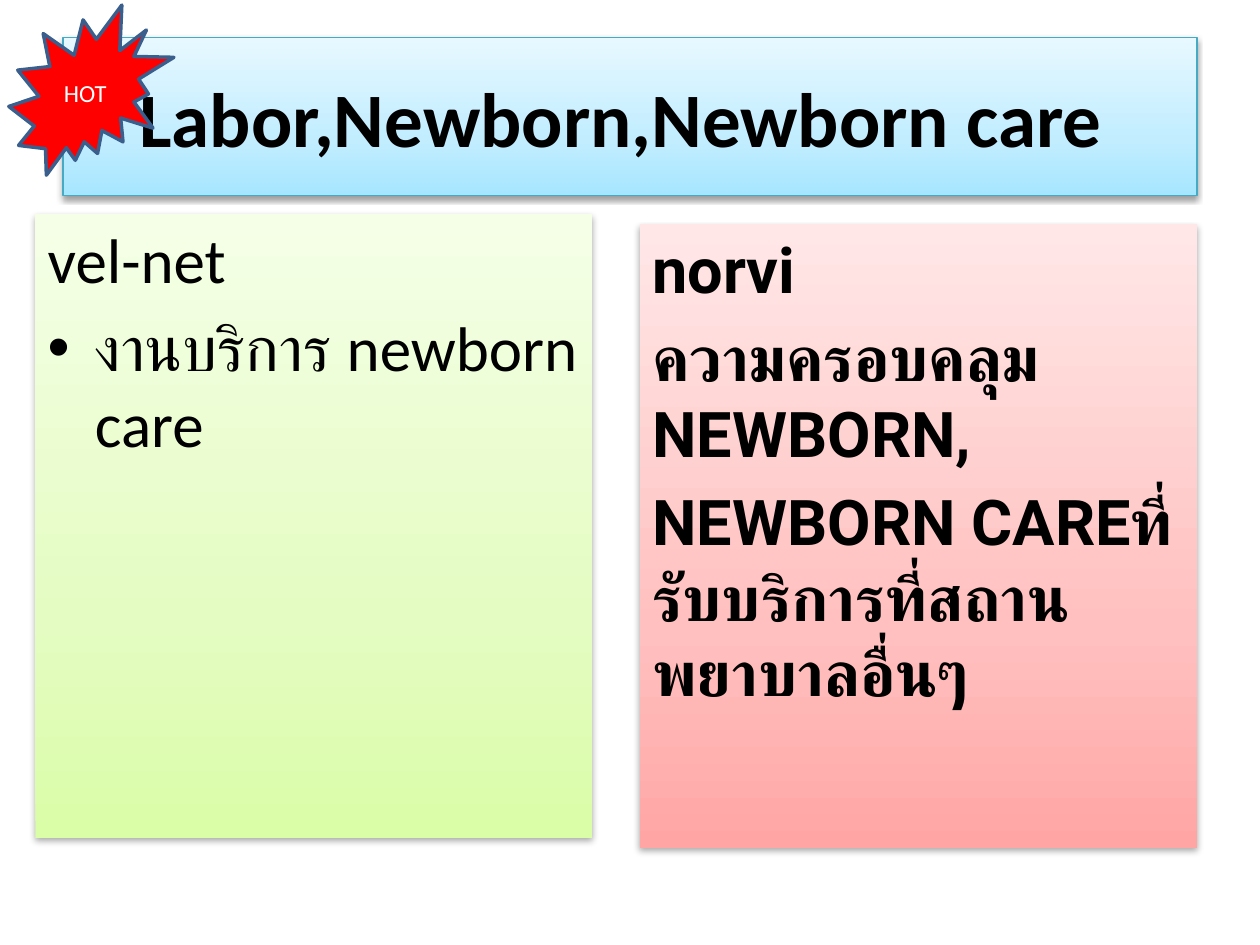
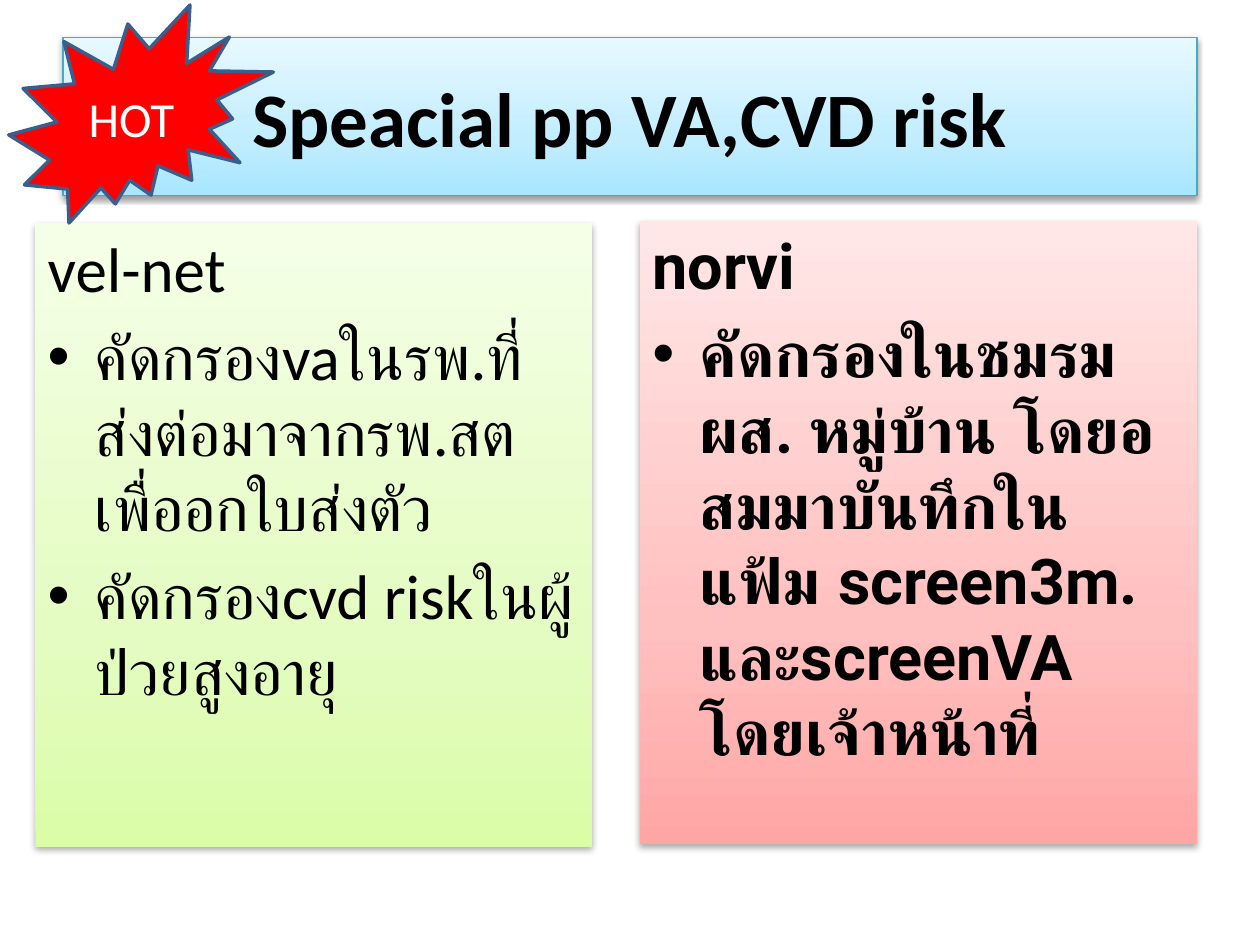
from dataclasses import dataclass

from pptx import Presentation
from pptx.dml.color import RGBColor
from pptx.enum.shapes import MSO_SHAPE as SHAPE
from pptx.enum.text import MSO_ANCHOR as ANCHOR, PP_ALIGN as ALIGN
from pptx.oxml import parse_xml
from pptx.oxml.ns import nsdecls
from pptx.util import Pt


@dataclass(frozen=True)
class Theme:
    blue: tuple = ("A7E6FF", "C1EDFF", "E7F8FF")
    green: tuple = ("DAFDA7", "E4FCC2", "F5FFE7")
    pink: tuple = ("FFA6A5", "FFC0BF", "FFE7E7")
    stops: tuple = (0, 35, 100)
    title_line: str = "46AAC5"
    seal: str = "FF0000"
    seal_line: str = "3A5F8C"
    ink: str = "000000"
    white: str = "FFFFFF"
    font: str = "Calibri"
    accent_font: str = "Roboto"
    title_size: int = 44
    body_size: int = 36
    indent: int = 27
    title_shadow: tuple = (38, 3.1, 1.6)  # opacity %, blur, distance
    panel_shadow: tuple = (32, 3.5, 2.2)


T = Theme()


def element(tag, content="", **attributes):
    """Make one DrawingML element."""
    e = parse_xml(f"<a:{tag} {nsdecls('a')}>{content}</a:{tag}>")
    for name, value in attributes.items():
        e.set(name, str(value))
    return e


def add_box(slide, kind, box, line=None, width=0.75):
    s = slide.shapes.add_shape(kind, *map(Pt, box))
    s.shadow.inherit = False
    if line:
        s.line.color.rgb = RGBColor.from_string(line)
        s.line.width = Pt(width)
    else:
        s.line.fill.background()
    s.text_frame.word_wrap = True
    return s


def shade(s, colors, shadow):
    """Give a shape an upward gradient and a shadow below it."""
    stops = "".join(
        f'<a:gs pos="{pos * 1000}"><a:srgbClr val="{color}"/></a:gs>'
        for pos, color in zip(T.stops, colors))
    sppr = s.element.spPr
    sppr.insert(2, element(
        "gradFill",
        f'<a:gsLst>{stops}</a:gsLst><a:lin ang="16200000" scaled="1"/>'))
    opacity, blur, dist = shadow
    sppr.find("{*}effectLst").append(element(
        "outerShdw",
        f'<a:srgbClr val="{T.ink}"><a:alpha val="{opacity * 1000}"/></a:srgbClr>',
        blurRad=int(Pt(blur)), dist=int(Pt(dist)), dir=5400000, rotWithShape=0))


def write(p, text, align=ALIGN.LEFT, color=T.ink, **formats):
    p.alignment = align
    r = p.add_run()
    r.text = text
    for name, value in formats.items():
        setattr(r.font, name, value)
    r.font.color.rgb = RGBColor.from_string(color)


def add_title(slide, text):
    s = add_box(slide, SHAPE.RECTANGLE, (36, 21.6, 648, 90), T.title_line)
    shade(s, T.blue, T.title_shadow)
    s.text_frame.vertical_anchor = ANCHOR.MIDDLE
    write(s.text_frame.paragraphs[0], text, ALIGN.CENTER,
          name=T.font, size=Pt(T.title_size), bold=True)


def add_panel(slide, left, top, colors, lines, **formats):
    """Fill a column with paragraphs; lines that start with • are bulleted."""
    s = add_box(slide, SHAPE.RECTANGLE, (left, top, 318.24, 356.4))
    shade(s, colors, T.panel_shadow)
    tf = s.text_frame
    tf.vertical_anchor = ANCHOR.TOP
    for i, line in enumerate(lines):
        p = tf.add_paragraph() if i else tf.paragraphs[0]
        write(p, line.removeprefix("•"), size=Pt(T.body_size), **formats)
        ppr = p._p.get_or_add_pPr()
        ppr.append(element("spcBef", '<a:spcPct val="20000"/>'))
        if line.startswith("•"):
            ppr.set("marL", str(Pt(T.indent)))
            ppr.set("indent", str(-Pt(T.indent)))
            ppr.append(element("buFont", typeface="Arial"))
            ppr.append(element("buChar", char="•"))


def add_hot_seal(slide, width, height, size):
    s = add_box(slide, SHAPE.EXPLOSION2, (5.04, 2.88, width, height), T.seal_line, 2)
    s.fill.solid()
    s.fill.fore_color.rgb = RGBColor.from_string(T.seal)
    s.text_frame.vertical_anchor = ANCHOR.MIDDLE
    write(s.text_frame.paragraphs[0], "HOT", ALIGN.CENTER, T.white,
          name=T.font, size=Pt(size))


def add_comparison(prs, title, left_top, left_lines, right_top, right_lines, seal):
    slide = prs.slides.add_slide(prs.slide_layouts[6])
    add_title(slide, title)
    add_panel(slide, 20.16, left_top, T.green, ["vel-net", *left_lines],
              name=T.font, bold=False)
    add_panel(slide, 365.76, right_top, T.pink, ["norvi", *right_lines],
              name=T.accent_font, bold=True)
    add_hot_seal(slide, *seal)


def main():
    prs = Presentation()
    prs.slide_width, prs.slide_height = Pt(720), Pt(540)
    add_comparison(
        prs, "Labor,Newborn,Newborn care ",
        122.4, ["•งานบริการ newborn care"],
        128.16, ["ความครอบคลุม NEWBORN,",
                 "NEWBORN CAREที่รับบริการที่สถานพยาบาลอื่นๆ"],
        seal=(94.32, 97.2, 14))
    add_comparison(
        prs, "Speacial pp VA,CVD risk",
        127.44, ["•คัดกรองvaในรพ.ที่ส่งต่อมาจากรพ.สตเพื่ออกใบส่งตัว",
                 "•คัดกรองcvd riskในผู้ป่วยสูงอายุ"],
        126, ["•คัดกรองในชมรม ผส. หมู่บ้าน โดยอสมมาบันทึกในแฟ้ม screen3m. "
              "และscreenVA โดยเจ้าหน้าที่"],
        seal=(151.2, 124.56, 28))
    prs.save("out.pptx")


if __name__ == "__main__":
    main()
